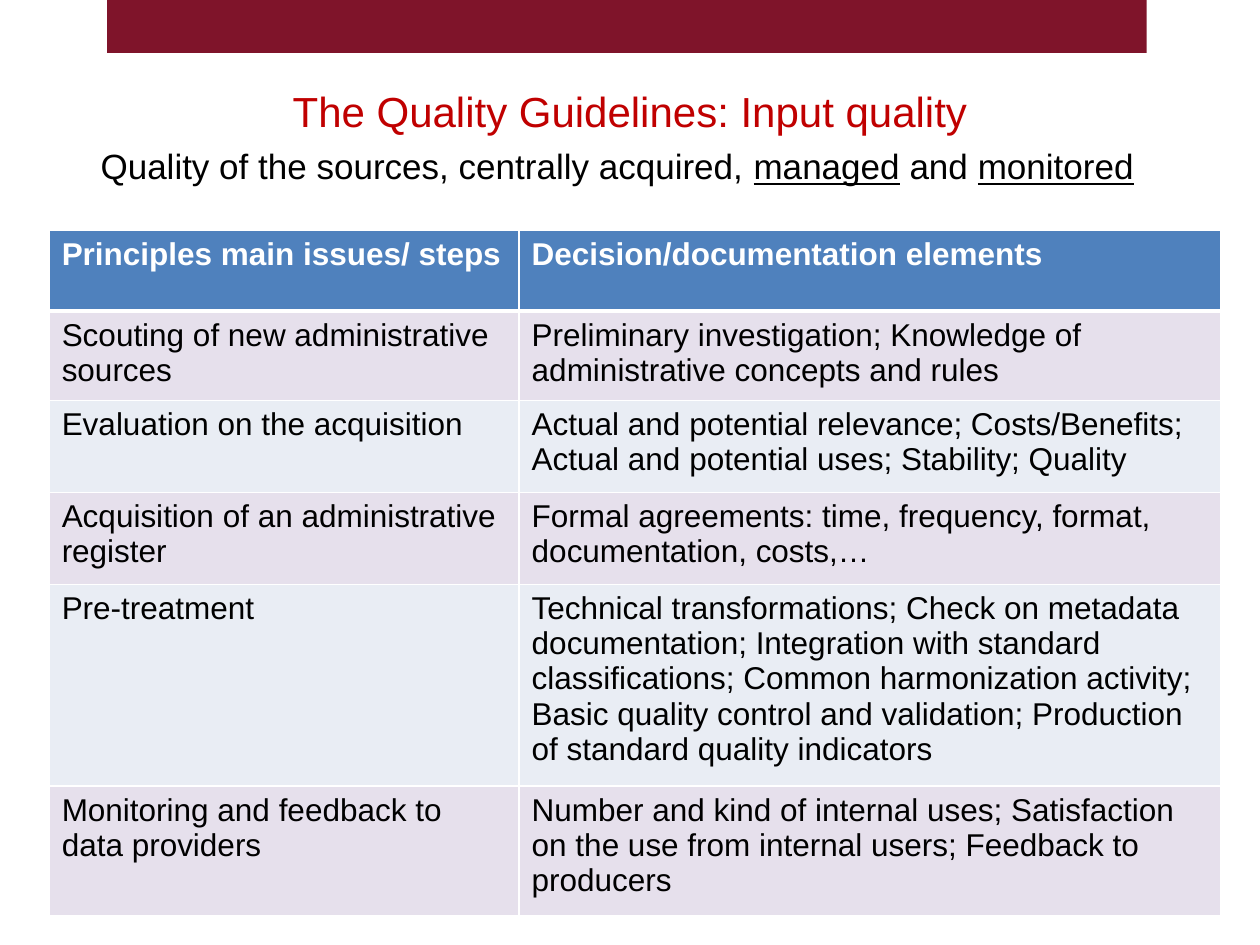
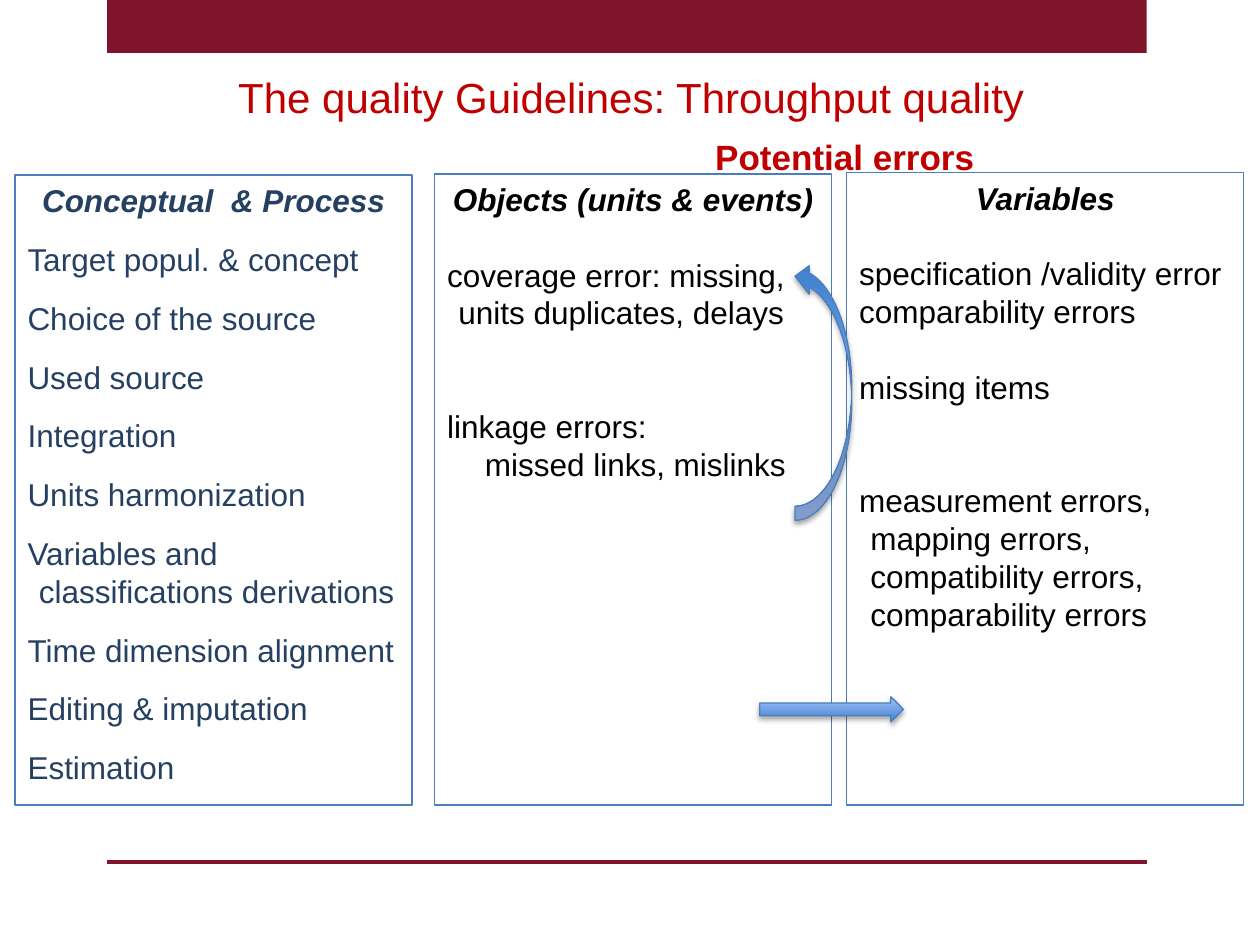
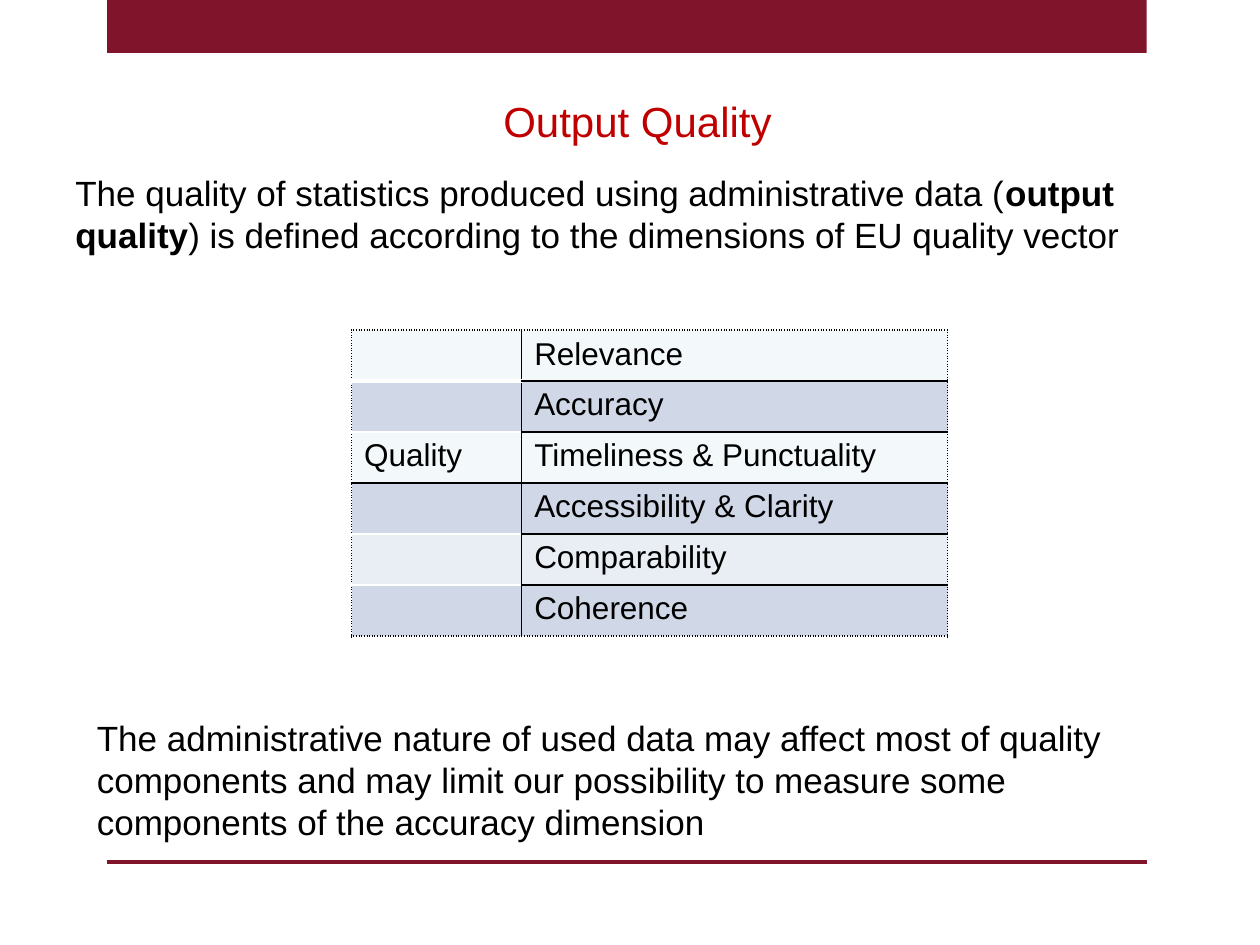
from dataclasses import dataclass
from typing import Optional

from lxml.etree import SubElement
from pptx import Presentation
from pptx.dml.color import RGBColor
from pptx.enum.shapes import MSO_CONNECTOR, MSO_SHAPE
from pptx.enum.text import MSO_ANCHOR, PP_ALIGN
from pptx.oxml.ns import qn
from pptx.util import Inches, Pt

FONT = "Arial"
COLORS = {
    "maroon": "7F142A", "title": "C00000", "black": "000000", "white": "FFFFFF",
    "navy": "254061", "outline": "4B7EBC", "header": "4F81BD",
    "lilac": "E6E0EC", "pale": "E9EDF4", "ice": "F3F9FA", "steel": "D0D8E8",
    "arrow_dark": "3F80CE", "arrow_light": "A4C4FF",
}
LINE_GAP = 21.6  # points, one line of 18 pt text


@dataclass
class Box:
    left: float
    top: float
    width: float
    height: float

    def lengths(self) -> tuple:
        return tuple(Inches(v) for v in (self.left, self.top, self.width, self.height))


@dataclass
class Entry:
    text: str
    before: float = 0
    left: float = 0
    first: float = 0


@dataclass
class ErrorPanel:
    box: Box
    heading: str
    color: str
    entries: list


@dataclass
class Border:
    color: str = "black"
    width: float = 1
    dash: Optional[str] = None


def rgb(name: str) -> RGBColor:
    return RGBColor.from_string(COLORS[name])


# Text
def write(frame, text: str, *, size: float = 18, color: str = "black",
          bold: bool = False, italic: bool = False, emphasis: str = "bold",
          align=PP_ALIGN.LEFT, before: float = 0,
          left: float = 0, first: float = 0) -> None:
    """Add a paragraph; the parts between bars get the emphasis."""
    paragraph = frame.paragraphs[-1]
    if paragraph.runs:
        paragraph = frame.add_paragraph()
    paragraph.alignment = align
    if before:
        paragraph.space_before = Pt(before)
    if left or first:
        properties = paragraph._p.get_or_add_pPr()
        properties.set("marL", str(Inches(left)))
        properties.set("indent", str(Inches(first)))
    for index, part in enumerate(text.split("|")):
        if not part:
            continue
        run = paragraph.add_run()
        run.text = part
        font = run.font
        font.name, font.size = FONT, Pt(size)
        font.bold, font.italic = bold, italic
        font.color.rgb = rgb(color)
        if index % 2:
            setattr(font, emphasis, True)


def add_text(slide, box: Box, text: str, *, anchor=MSO_ANCHOR.TOP, **style) -> None:
    frame = slide.shapes.add_textbox(*box.lengths()).text_frame
    frame.word_wrap = True
    frame.vertical_anchor = anchor
    write(frame, text, **style)


# Shared slide frame: band, footer rule, title
def start_slide(prs, title: str, title_box: Box, *, footer: bool = True):
    slide = prs.slides.add_slide(prs.slide_layouts[6])
    band = slide.shapes.add_shape(MSO_SHAPE.RECTANGLE, *Box(0.85, 0, 8.25, 0.42).lengths())
    band.shadow.inherit = False
    band.fill.solid()
    band.fill.fore_color.rgb = rgb("maroon")
    band.line.fill.background()
    if footer:
        rule = slide.shapes.add_connector(
            MSO_CONNECTOR.STRAIGHT, Inches(0.85), Inches(6.84), Inches(9.1), Inches(6.84))
        rule.line.color.rgb = rgb("maroon")
        rule.line.width = Pt(2)
        SubElement(rule._element.spPr, qn("a:effectLst"))
    add_text(slide, title_box, title, anchor=MSO_ANCHOR.MIDDLE,
             size=24, color="title", align=PP_ALIGN.CENTER)
    return slide


# Tables
def add_grid(slide, box: Box, columns: list, rows: list):
    table = slide.shapes.add_table(len(rows), len(columns), *box.lengths()).table
    table.first_row = table.horz_banding = False
    for column, width in zip(table.columns, columns):
        column.width = Inches(width)
    for row, height in zip(table.rows, rows):
        row.height = Inches(height)
    return table


def style_cell(cell, fill: str, left: Border, right: Border, top: Border, bottom: Border) -> None:
    properties = cell._tc.get_or_add_tcPr()
    for side, border in zip("LRTB", (left, right, top, bottom)):
        line = SubElement(properties, qn(f"a:ln{side}"), w=str(Pt(border.width)))
        solid = SubElement(line, qn("a:solidFill"))
        SubElement(solid, qn("a:srgbClr"), val=COLORS[border.color])
        if border.dash:
            SubElement(line, qn("a:prstDash"), val=border.dash)
    cell.fill.solid()
    cell.fill.fore_color.rgb = rgb(fill)


# Slide 1: input quality
INPUT_STEPS = [
    ("Principles main issues/ steps", "Decision/documentation elements"),
    ("Scouting of new administrative sources",
     "Preliminary investigation; Knowledge of administrative concepts and rules"),
    ("Evaluation on the acquisition",
     "Actual and potential relevance; Costs/Benefits; Actual and potential uses; "
     "Stability; Quality"),
    ("Acquisition of an administrative register",
     "Formal agreements: time, frequency, format, documentation, costs,…"),
    ("Pre-treatment",
     "Technical transformations; Check on metadata documentation; Integration with "
     "standard classifications; Common harmonization activity; Basic quality control "
     "and validation; Production of standard quality indicators"),
    ("Monitoring and feedback to data providers",
     "Number and kind of internal uses; Satisfaction on the use from internal users; "
     "Feedback to producers"),
]


def build_input_quality(prs) -> None:
    slide = start_slide(prs, "The Quality Guidelines: Input quality",
                        Box(0.5, 0.57, 9, 0.61), footer=False)
    add_text(slide, Box(0.5, 1.1, 9, 0.51),
             "Quality of the sources, centrally acquired, |managed| and |monitored|",
             size=20, emphasis="underline", left=0.2)
    table = add_grid(slide, Box(0.39, 1.83, 9.3, 5.31), [3.73, 5.57],
                     [0.64, 0.71, 0.73, 0.73, 1.47, 1.03])
    thin, thick = Border("white"), Border("white", 3)
    for r, step in enumerate(INPUT_STEPS):
        header = r == 0
        fill = "header" if header else ("lilac" if r % 2 else "pale")
        for c, text in enumerate(step):
            cell = table.cell(r, c)
            style_cell(cell, fill, thin, thin, thick if r == 1 else thin,
                       thick if header else thin)
            write(cell.text_frame, text, bold=header, color="white" if header else "black")


# Slide 2: throughput quality
def process_step(text: str, hang: float = 0.2) -> Entry:
    return Entry(text, 12, hang, -hang)


PANELS = [
    ErrorPanel(Box(0.12, 1.39, 3.15, 5), "Conceptual  & Process", "navy", [
        process_step("Target popul. & concept"),
        process_step("Choice of the source"),
        process_step("Used source"),
        process_step("Integration"),
        process_step("Units harmonization"),
        process_step("Variables and classifications derivations", 0.09),
        process_step("Time dimension alignment"),
        process_step("Editing & imputation"),
        process_step("Estimation"),
    ]),
    ErrorPanel(Box(3.45, 1.38, 3.15, 5.01), "Objects (units & events)", "black", [
        Entry("coverage error: missing, units duplicates, delays", LINE_GAP, 0.09, -0.09),
        Entry("linkage errors:", 2 * LINE_GAP),
        Entry("missed links, mislinks", first=0.3),
    ]),
    ErrorPanel(Box(6.72, 1.37, 3.15, 5.02), "Variables", "black", [
        Entry("specification /validity error", LINE_GAP),
        Entry("comparability errors"),
        Entry("missing items", LINE_GAP),
        Entry("measurement errors, mapping errors, compatibility errors, comparability errors",
              2 * LINE_GAP, 0.09, -0.09),
    ]),
]


def add_panel(slide, panel: ErrorPanel) -> None:
    shape = slide.shapes.add_shape(MSO_SHAPE.RECTANGLE, *panel.box.lengths())
    shape.shadow.inherit = False
    shape.fill.background()
    shape.line.color.rgb = rgb("outline")
    shape.line.width = Pt(0.75)
    frame = shape.text_frame
    frame.word_wrap = True
    frame.vertical_anchor = MSO_ANCHOR.TOP
    write(frame, panel.heading, color=panel.color, bold=True, italic=True,
          align=PP_ALIGN.CENTER)
    for entry in panel.entries:
        write(frame, entry.text, color=panel.color, before=entry.before,
              left=entry.left, first=entry.first)


def add_arrow(slide, kind, box: Box, *, flipped: bool = False) -> None:
    arrow = slide.shapes.add_shape(kind, *box.lengths())
    arrow.shadow.inherit = False
    arrow.fill.gradient()
    arrow.fill.gradient_angle = 90
    for stop, color in zip(arrow.fill.gradient_stops, ("arrow_dark", "arrow_light")):
        stop.color.rgb = rgb(color)
    arrow.line.color.rgb = rgb("outline")
    arrow.line.width = Pt(0.75)
    properties = arrow._element.spPr
    if flipped:
        properties.find(qn("a:xfrm")).set("flipV", "1")
    # Soft shadow straight below
    shadow = SubElement(properties.find(qn("a:effectLst")), qn("a:outerShdw"),
                        blurRad=str(Pt(3.1)), dist=str(Pt(1.8)), dir="5400000",
                        rotWithShape="0")
    tint = SubElement(shadow, qn("a:srgbClr"), val=COLORS["black"])
    SubElement(tint, qn("a:alpha"), val="35000")


def build_throughput_quality(prs) -> None:
    slide = start_slide(prs, "The quality Guidelines: Throughput quality",
                        Box(0.51, 0.52, 9, 0.5))
    for panel in PANELS:
        add_panel(slide, panel)
    add_text(slide, Box(5.43, 1.03, 2.55, 0.44), "Potential errors", size=20,
             color="title", bold=True, align=PP_ALIGN.CENTER)
    add_arrow(slide, MSO_SHAPE.CURVED_LEFT_ARROW, Box(6.31, 2.08, 0.45, 2.05), flipped=True)
    add_arrow(slide, MSO_SHAPE.RIGHT_ARROW, Box(6.03, 5.53, 1.14, 0.2))


# Slide 3: output quality
DIMENSIONS = ["Relevance", "Accuracy", "Timeliness & Punctuality",
              "Accessibility & Clarity", "Comparability", "Coherence"]
DIMENSION_FILLS = ["ice", "steel", "ice", "steel", "pale", "steel"]
QUALITY_ROW = 2


def build_output_quality(prs) -> None:
    slide = start_slide(prs, "Output Quality", Box(0.56, 0.68, 9, 0.56))
    add_text(slide, Box(0.5, 1.31, 9, 0.85),
             "The quality of statistics produced using administrative data "
             "(|output quality|) is defined according to the dimensions of EU quality vector",
             size=20)
    count = len(DIMENSIONS)
    table = add_grid(slide, Box(2.79, 2.62, 4.73, 2.43), [1.35, 3.38], [2.43 / count] * count)
    solid, dotted = Border(), Border(dash="sysDot")
    white, thick = Border("white"), Border("white", 3)
    # Horizontal rules from top to bottom of each column
    label_rules = [dotted, thick, white, solid, white, white, dotted]
    dimension_rules = [dotted] + [solid] * (count - 1) + [dotted]
    for r, (dimension, fill) in enumerate(zip(DIMENSIONS, DIMENSION_FILLS)):
        label, name = table.cell(r, 0), table.cell(r, 1)
        style_cell(label, fill, dotted, solid, label_rules[r], label_rules[r + 1])
        style_cell(name, fill, solid, dotted, dimension_rules[r], dimension_rules[r + 1])
        write(name.text_frame, dimension)
        if r == QUALITY_ROW:
            write(label.text_frame, "Quality")
    add_text(slide, Box(0.67, 5.64, 9, 1.1),
             "The administrative nature of used data may affect most of quality components "
             "and may limit our possibility to measure some components of the accuracy dimension",
             size=20)


def main() -> None:
    prs = Presentation()
    prs.slide_width, prs.slide_height = Inches(10), Inches(7.5)
    build_input_quality(prs)
    build_throughput_quality(prs)
    build_output_quality(prs)
    prs.save("out.pptx")


if __name__ == "__main__":
    main()
